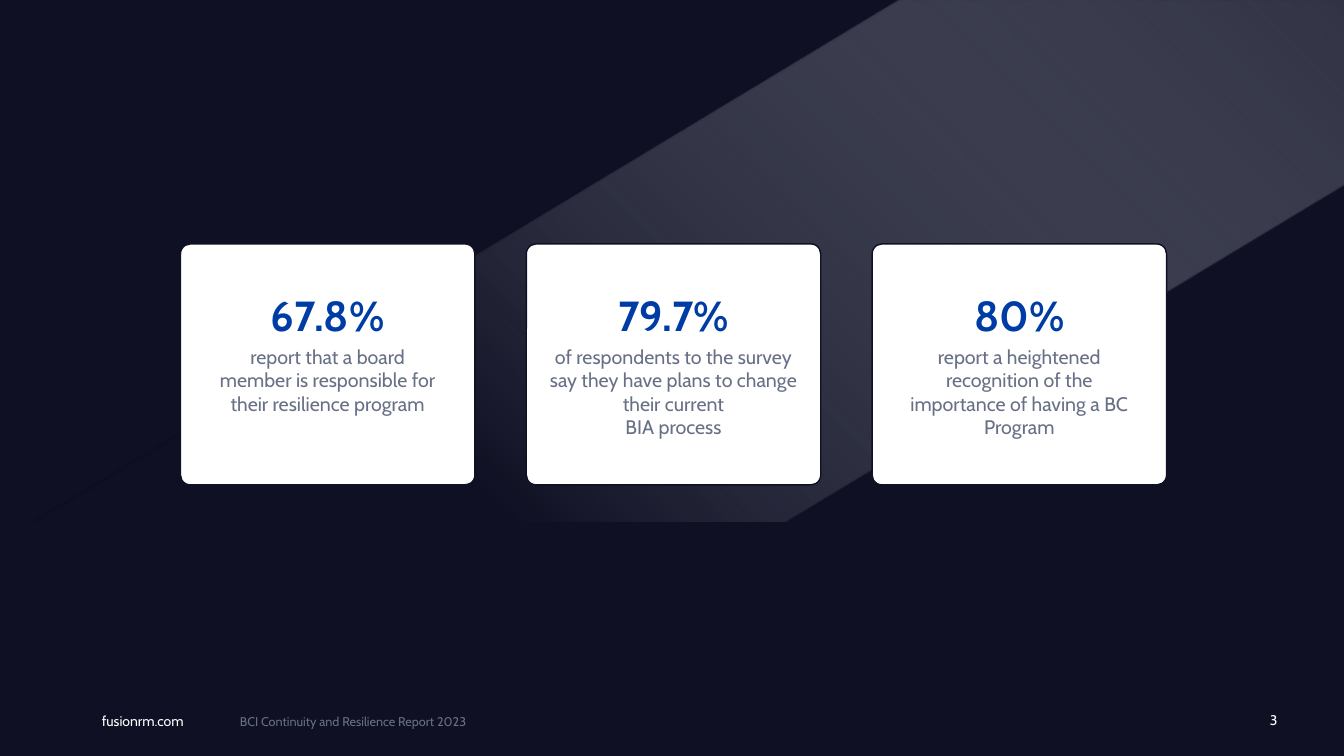
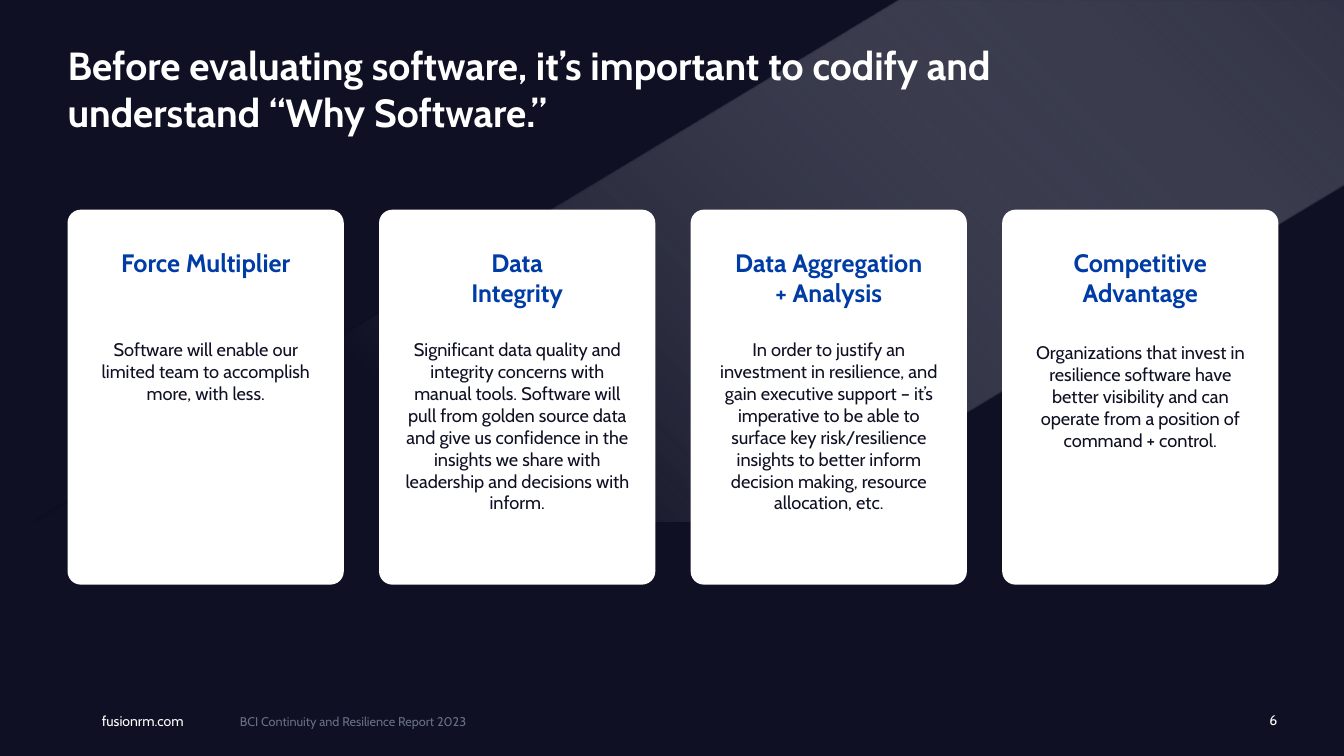
from dataclasses import dataclass

from lxml.etree import SubElement
from pptx import Presentation
from pptx.dml.color import RGBColor
from pptx.enum.shapes import MSO_SHAPE
from pptx.enum.text import MSO_ANCHOR, MSO_AUTO_SIZE, PP_ALIGN
from pptx.oxml.ns import qn
from pptx.util import Inches, Pt

# Shared look
FONT = "Cabin"
NAVY, BLUE, GRAY, WHITE, MIST = "0F1023", "003CA5", "687086", "FFFFFF", "ACB1BE"
SLIDE_W, SLIDE_H = 13.33, 7.5
TITLE_ONLY, BLANK = 5, 6


@dataclass(frozen=True)
class Style:
    size: float
    color: str
    bold: bool = False
    align: PP_ALIGN = PP_ALIGN.LEFT
    anchor: MSO_ANCHOR = MSO_ANCHOR.TOP


@dataclass(frozen=True)
class Card:
    heading: str
    body: str
    body_width: float = 2.27
    body_drop: float = 0


@dataclass(frozen=True)
class CardRow:
    """Equal cards; lengths in inches, text tops measured from the card top."""
    left: float
    top: float
    pitch: float
    width: float
    height: float
    corner: float
    heading_top: float
    heading_width: float
    heading_style: Style
    body_top: float
    body_style: Style
    outline: bool = False

    def center(self, column: int) -> float:
        return self.left + column * self.pitch + self.width / 2


TITLE = Style(28, WHITE, bold=True, anchor=MSO_ANCHOR.BOTTOM)
SITE = Style(10, WHITE, anchor=MSO_ANCHOR.MIDDLE)
NUMBER = Style(10, WHITE, align=PP_ALIGN.RIGHT, anchor=MSO_ANCHOR.MIDDLE)
SOURCE = Style(9, GRAY)

FIGURE_ROW = CardRow(
    left=1.79, top=2.42, pitch=3.43, width=2.92, height=2.39, corner=0.041,
    heading_top=0.45, heading_width=3.01,
    heading_style=Style(30, BLUE, True, PP_ALIGN.CENTER),
    body_top=1, body_style=Style(14, GRAY, align=PP_ALIGN.CENTER), outline=True)
REASON_ROW = CardRow(
    left=0.67, top=2.08, pitch=3.09, width=2.74, height=3.72, corner=0.048,
    heading_top=0.37, heading_width=2.17,
    heading_style=Style(18, BLUE, True, PP_ALIGN.CENTER),
    body_top=1.28, body_style=Style(13, NAVY, align=PP_ALIGN.CENTER))

# Content
FIGURES = [
    Card("67.8%", "report that a board member is responsible for their resilience program"),
    Card("79.7%", "of respondents to the survey say they have plans to change "
         "their current\nBIA process", body_width=2.6),
    Card("80%", "report a heightened recognition of the importance of having a BC Program"),
]
REASONS = [
    Card("Force Multiplier",
         "Software will enable our limited team to accomplish more, with less."),
    Card("Data\nIntegrity",
         "Significant data quality and integrity concerns with manual tools. Software "
         "will pull from golden source data and give us confidence in the insights we "
         "share with leadership and decisions with inform."),
    Card("Data Aggregation\n+ Analysis",
         "In order to justify an investment in resilience, and gain executive support – "
         "it’s imperative to be able to surface key risk/resilience insights to better "
         "inform decision making, resource allocation, etc."),
    Card("Competitive Advantage",
         "Organizations that invest in resilience software have better visibility and "
         "can operate from a position of command + control.", body_drop=0.03),
]


def rgb(color: str) -> RGBColor:
    return RGBColor.from_string(color)


# Text
def write(tf, text: str, style: Style, inset: float = 0, wrap: bool = True) -> None:
    tf.word_wrap = wrap
    tf.auto_size = MSO_AUTO_SIZE.NONE
    tf.vertical_anchor = style.anchor
    tf.margin_left = tf.margin_right = Inches(inset)
    tf.margin_top = tf.margin_bottom = Inches(inset / 2)
    p = tf.paragraphs[0]
    p.alignment = style.align
    for i, line in enumerate(text.split("\n")):
        if i:
            p.add_line_break()
        r = p.add_run()
        r.text = line
        r.font.name = FONT
        r.font.size = Pt(style.size)
        r.font.bold = style.bold
        r.font.color.rgb = rgb(style.color)


def add_text(s, left: float, top: float, width: float, height: float, text: str,
             style: Style, inset: float = 0, wrap: bool = True) -> None:
    box = s.shapes.add_textbox(*map(Inches, (left, top, width, height)))
    write(box.text_frame, text, style, inset, wrap)


# Background band and footer
def add_band(s) -> None:
    sp = s.shapes.add_shape(MSO_SHAPE.PARALLELOGRAM,
                            *map(Inches, (0.33, 0, 16.06, 5.17)))
    sp.adjustments[0] = 1.663
    sp.shadow.inherit = False
    sp.line.fill.background()
    sp.fill.gradient()
    sp.fill.gradient_angle = 225
    for stop, position, color in zip(sp.fill.gradient_stops, (0, 0.78), (MIST, NAVY)):
        stop.position = position
        stop.color.rgb = rgb(color)
    mist = next(sp._element.iter(qn("a:srgbClr")))
    SubElement(mist, qn("a:alpha")).set("val", "10000")


def add_footer(s, number: int) -> None:
    add_text(s, 1.01, 7, 1.29, 0.31, "fusionrm.com", SITE, wrap=False)
    add_text(s, 2.28, 7.03, SLIDE_W / 2, 0.25,
             "BCI Continuity and Resilience Report 2023", SOURCE, inset=0.1)
    add_text(s, 12, 6.99, 0.67, 0.31, str(number), NUMBER)


def add_slide(prs, layout: int, number: int):
    s = prs.slides.add_slide(prs.slide_layouts[layout])
    add_band(s)
    add_footer(s, number)
    return s


# Cards
def add_cards(s, row: CardRow, cards: list[Card]) -> None:
    for column, card in enumerate(cards):
        center = row.center(column)
        sp = s.shapes.add_shape(
            MSO_SHAPE.ROUNDED_RECTANGLE, Inches(center - row.width / 2),
            Inches(row.top), Inches(row.width), Inches(row.height))
        sp.adjustments[0] = row.corner
        sp.shadow.inherit = False
        sp.fill.solid()
        sp.fill.fore_color.rgb = rgb(WHITE)
        if row.outline:
            sp.line.color.rgb = rgb(NAVY)
            sp.line.width = Pt(1)
        else:
            sp.line.fill.background()

        body_top = row.body_top + card.body_drop
        add_text(s, center - row.heading_width / 2, row.top + row.heading_top,
                 row.heading_width, row.body_top - row.heading_top,
                 card.heading, row.heading_style)
        add_text(s, center - card.body_width / 2, row.top + body_top,
                 card.body_width, row.height - body_top, card.body, row.body_style)


def main() -> None:
    prs = Presentation()
    prs.slide_width, prs.slide_height = Inches(SLIDE_W), Inches(SLIDE_H)
    background = prs.slide_master.background.fill
    background.solid()
    background.fore_color.rgb = rgb(NAVY)

    # Survey figures
    s = add_slide(prs, BLANK, 3)
    add_cards(s, FIGURE_ROW, FIGURES)

    # Reasons for software
    s = add_slide(prs, TITLE_ONLY, 6)
    title = s.shapes.title
    title.left, title.top, title.width, title.height = map(
        Inches, (0.67, 0.48, 9.28, 0.86))
    write(title.text_frame, "Before evaluating software, it’s important to codify "
          "and understand “Why Software.”", TITLE)
    # Bring the title in front of the band
    s.shapes._spTree.append(title._element)
    add_cards(s, REASON_ROW, REASONS)

    prs.save("out.pptx")


if __name__ == "__main__":
    main()
